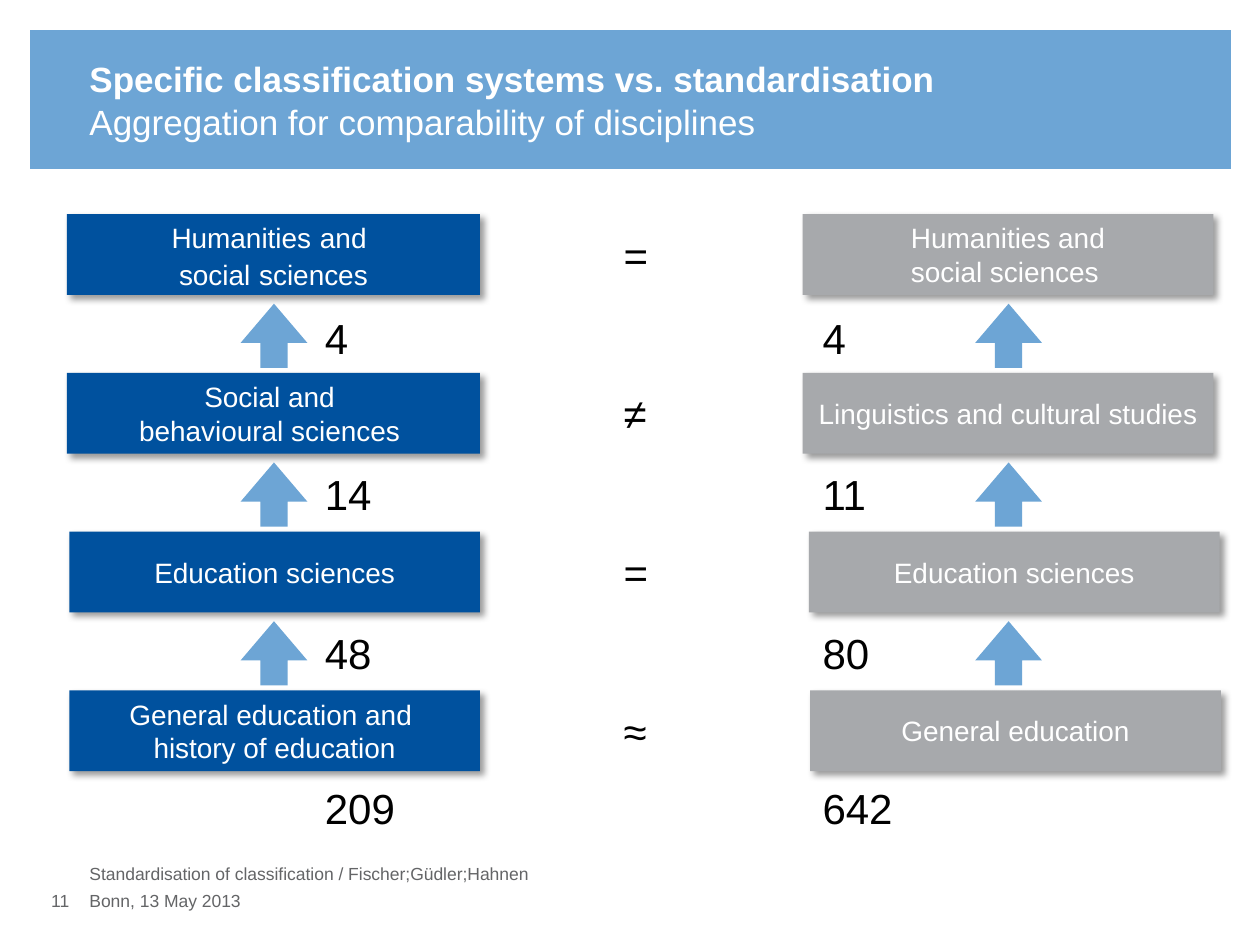
from lxml import etree
from pptx import Presentation
from pptx.dml.color import RGBColor
from pptx.enum.shapes import MSO_SHAPE
from pptx.enum.text import MSO_ANCHOR, MSO_AUTO_SIZE, PP_ALIGN
from pptx.oxml.ns import qn
from pptx.util import Inches, Pt

RECTANGLE, ARROW = MSO_SHAPE.RECTANGLE, MSO_SHAPE.RIGHT_ARROW
MIDDLE = MSO_ANCHOR.MIDDLE
LEFT, CENTER, RIGHT = PP_ALIGN.LEFT, PP_ALIGN.CENTER, PP_ALIGN.RIGHT
FIT_SHAPE = MSO_AUTO_SIZE.SHAPE_TO_FIT_TEXT

COLORS = {
    "band": "6DA5D5",
    "blue": "00519E",
    "gray": "A7A9AC",
    "white": "FFFFFF",
    "black": "000000",
    "footer": "646567",
}
FORMATS = {
    "title": {"size": Pt(20), "bold": True, "color": "white"},
    "subtitle": {"size": Pt(20), "color": "white"},
    "footer": {"size": Pt(10), "color": "footer"},
    "label": {"size": Pt(16), "color": "white"},
    "wide space": {"size": Pt(18), "color": "black"},
    "figure": {"size": Pt(24), "color": "black"},
}

FIRST_ROW, ROW_PITCH = 1.7, 1.26
BOX_HEIGHT = 0.64
ARROW_LEFTS = (1.92, 7.75)
COUNT_LEFTS = (2.48, 6.43)
COUNT_TOPS = (2.43, 3.67, 4.93, 6.16)

# Each level: (left, width, paragraphs) of the blue box, sign, the same of the
# gray box, then the two counts.
LEVELS = [
    ((0.53, 3.28, ["Humanities and ", "social sciences"]), "=",
     (6.37, 3.26, ["Humanities and", "social sciences"]), ("4", "4")),
    ((0.53, 3.28, ["Social and \vbehavioural sciences "]), "≠",
     (6.37, 3.26, ["Linguistics and cultural studies"]), ("14", "11")),
    ((0.55, 3.26, ["Education sciences"]), "=",
     (6.42, 3.26, ["Education sciences"]), ("48", "80")),
    ((0.55, 3.26, ["General education and \vhistory of education"]), "≈",
     (6.43, 3.26, ["General education"]), ("209", "642")),
]


def rgb(name):
    return RGBColor.from_string(COLORS[name])


def format_font(font, style):
    font.name = "Arial"
    for key, value in FORMATS[style].items():
        if key == "color":
            font.color.rgb = rgb(value)
        else:
            setattr(font, key, value)


def write_paragraphs(frame, lines, style, align=LEFT):
    for index, line in enumerate(lines):
        para = frame.add_paragraph() if index else frame.paragraphs[0]
        para.text = line
        para.alignment = align
        for span in para.runs:
            format_font(span.font, style)


def write_wide_spaced(frame, lines):
    """Write centred labels whose spaces are larger than their words."""
    for index, line in enumerate(lines):
        para = frame.add_paragraph() if index else frame.paragraphs[0]
        para.alignment = CENTER
        for piece in line.replace(" ", "| |").split("|"):
            if piece:
                span = para.add_run()
                span.text = piece
                format_font(span.font, "label" if piece.strip() else "wide space")


def add_plain_text(page, left, top, width, height, text, style, align=LEFT):
    """Add a text box without insets."""
    box = page.shapes.add_textbox(Inches(left), Inches(top), Inches(width), Inches(height))
    frame = box.text_frame
    frame.word_wrap = True
    for side in ("left", "top", "right", "bottom"):
        setattr(frame, f"margin_{side}", 0)
    write_paragraphs(frame, [text], style, align)


def add_figure(page, left, top, text):
    """Add a sign or count, in a box as wide as its characters."""
    width = 0.29 + 0.19 * len(text)
    box = page.shapes.add_textbox(Inches(left), Inches(top), Inches(width), Inches(0.5))
    box.text_frame.word_wrap = False
    box.text_frame.auto_size = FIT_SHAPE
    write_paragraphs(box.text_frame, [text], "figure")


def add_filled_shape(page, kind, left, top, width, height, color):
    shape = page.shapes.add_shape(
        kind, Inches(left), Inches(top), Inches(width), Inches(height))
    shape.shadow.inherit = False
    shape.fill.solid()
    shape.fill.fore_color.rgb = rgb(color)
    shape.line.fill.background()
    return shape


def add_drop_shadow(shape):
    effects = shape._element.spPr.find(qn("a:effectLst"))
    shadow = etree.SubElement(
        effects, qn("a:outerShdw"), blurRad=str(Pt(4)), dist=str(Pt(3)),
        dir="2700000", algn="tl", rotWithShape="0")
    color = etree.SubElement(shadow, qn("a:srgbClr"), val=COLORS["black"])
    etree.SubElement(color, qn("a:alpha"), val="40000")


def add_discipline(page, left, top, width, color):
    shape = add_filled_shape(page, RECTANGLE, left, top, width, BOX_HEIGHT, color)
    add_drop_shadow(shape)
    frame = shape.text_frame
    frame.word_wrap = True
    frame.vertical_anchor = MIDDLE
    return frame


def add_up_arrow(page, left, top):
    arrow = add_filled_shape(page, ARROW, left, top, 0.51, 0.53, "band")
    arrow.rotation = 270
    arrow.adjustments[0] = 0.41
    arrow.adjustments[1] = 0.61


def add_level(page, index, level):
    (left, width, lines), sign, (gray_left, gray_width, gray_lines), counts = level
    top = FIRST_ROW + index * ROW_PITCH

    frame = add_discipline(page, left, top, width, "blue")
    if index == 0:
        write_wide_spaced(frame, lines)
    else:
        write_paragraphs(frame, lines, "label", CENTER)

    frame = add_discipline(page, gray_left, top, gray_width, "gray")
    frame._txBody.bodyPr.set("anchorCtr", "1")
    write_paragraphs(frame, gray_lines, "label")

    add_figure(page, 4.85, top + 0.07, sign)
    for count_left, count in zip(COUNT_LEFTS, counts):
        add_figure(page, count_left, COUNT_TOPS[index], count)
    if index < len(LEVELS) - 1:
        for arrow_left in ARROW_LEFTS:
            add_up_arrow(page, arrow_left, top + 0.7)


def main():
    deck = Presentation()
    deck.slide_width, deck.slide_height = Inches(10), Inches(7.5)
    page = deck.slides.add_slide(deck.slide_layouts[6])

    add_filled_shape(page, RECTANGLE, 0.24, 0.24, 9.53, 1.1, "band")
    add_plain_text(page, 0.71, 0.46, 8.66, 0.3,
                   "Specific classification systems vs. standardisation", "title")
    add_plain_text(page, 0.71, 0.8, 8.66, 0.3,
                   "Aggregation for comparability of disciplines", "subtitle")
    for index, level in enumerate(LEVELS):
        add_level(page, index, level)
    add_plain_text(page, 0.71, 6.85, 6.95, 0.22,
                   "Standardisation of classification / Fischer;Güdler;Hahnen", "footer")
    add_plain_text(page, 0.71, 7.06, 6.95, 0.27, "Bonn, 13 May 2013", "footer")
    add_plain_text(page, 0.12, 7.06, 0.43, 0.27, "11", "footer", RIGHT)

    deck.save("out.pptx")


if __name__ == "__main__":
    main()
